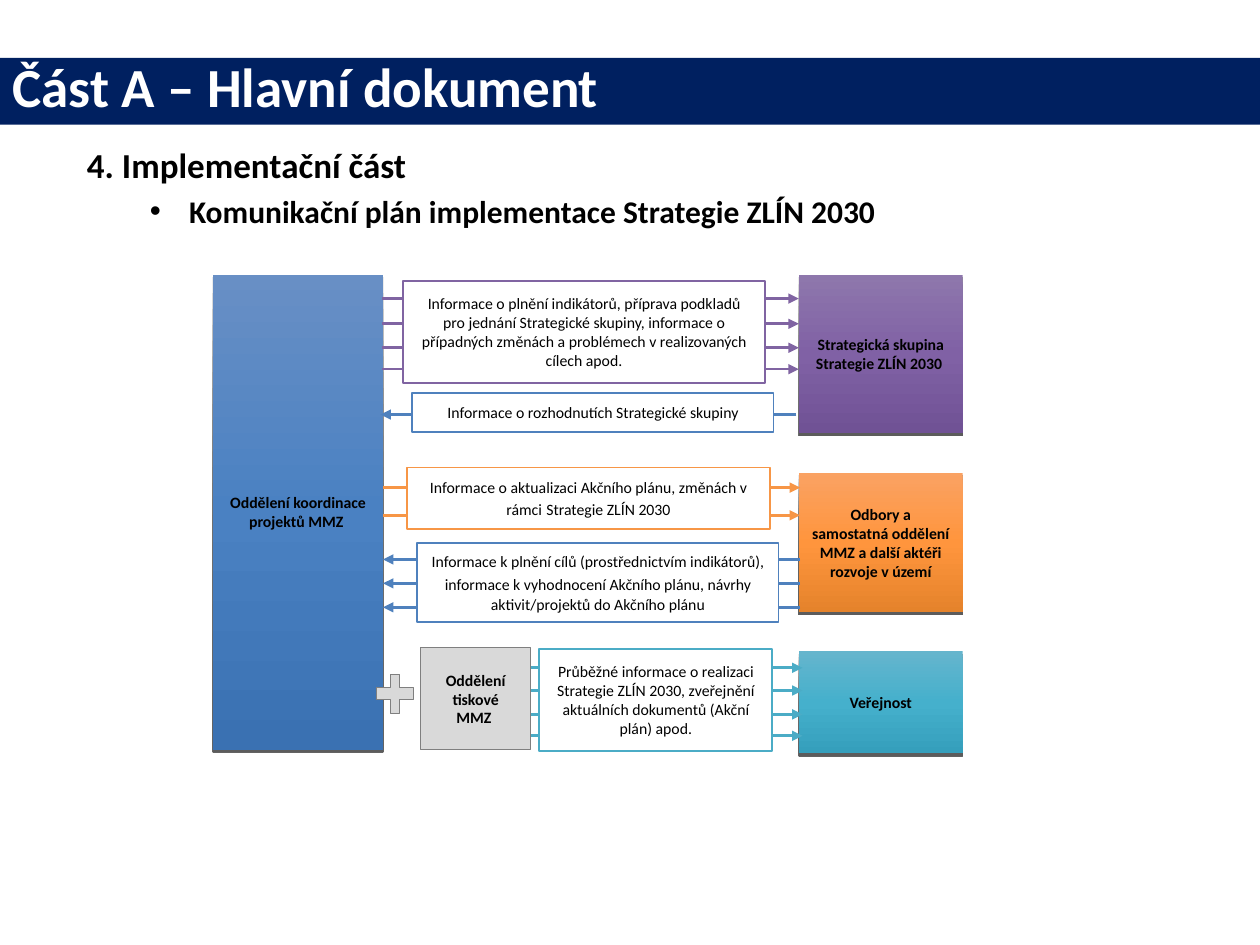
"""Build the slide on the communication plan of the Strategie ZLÍN 2030."""
from dataclasses import dataclass
from typing import Optional

from lxml.etree import SubElement
from pptx import Presentation
from pptx.dml.color import RGBColor
from pptx.enum.shapes import MSO_CONNECTOR, MSO_SHAPE
from pptx.enum.text import MSO_ANCHOR, MSO_AUTO_SIZE, PP_ALIGN
from pptx.oxml import parse_xml
from pptx.oxml.ns import nsdecls, qn
from pptx.util import Inches, Pt

FONT = "Calibri"
NAVY = RGBColor(0x00, 0x20, 0x60)
WHITE = RGBColor(0xFF, 0xFF, 0xFF)
BLACK = RGBColor(0x00, 0x00, 0x00)
GRAY = RGBColor(0xD9, 0xD9, 0xD9)
GRAY_EDGE = RGBColor(0x7F, 0x7F, 0x7F)
PURPLE = RGBColor(0x80, 0x64, 0xA2)
BLUE = RGBColor(0x4F, 0x81, 0xBD)
ORANGE = RGBColor(0xF7, 0x96, 0x46)
TEAL = RGBColor(0x4B, 0xAC, 0xC6)
BLUE_SHADES = (RGBColor(0x68, 0x8F, 0xC5), RGBColor(0x4A, 0x81, 0xC2), RGBColor(0x3A, 0x71, 0xB2))
PURPLE_SHADES = (RGBColor(0x8E, 0x77, 0xAC), RGBColor(0x80, 0x61, 0xA5), RGBColor(0x70, 0x52, 0x95))
ORANGE_SHADES = (RGBColor(0xFA, 0xA2, 0x63), RGBColor(0xFF, 0x95, 0x3D), RGBColor(0xE5, 0x83, 0x2B))
TEAL_SHADES = (RGBColor(0x65, 0xB5, 0xCD), RGBColor(0x45, 0xB0, 0xCC), RGBColor(0x35, 0x9F, 0xBC))


@dataclass
class Box:
    left: float
    top: float
    width: float
    height: float
    text: tuple = ()


@dataclass
class Party:
    box: Box
    shades: tuple


@dataclass
class Message:
    box: Box
    color: RGBColor
    start: float
    end: float
    levels: tuple


PARTIES = (
    Party(Box(1.69, 2.18, 1.35, 3.77, ("Oddělení koordinace projektů MMZ ",)), BLUE_SHADES),
    Party(Box(6.34, 2.18, 1.3, 1.26, ("Strategická skupina Strategie ZLÍN 2030 ",)), PURPLE_SHADES),
    Party(Box(6.34, 3.75, 1.3, 1.11, (
        "Odbory a samostatná oddělení MMZ a další aktéři rozvoje v území",)), ORANGE_SHADES),
    Party(Box(6.34, 5.17, 1.3, 0.81, ("Veřejnost",)), TEAL_SHADES),
)
MESSAGES = (
    Message(Box(3.2, 2.23, 2.87, 0.81, (
        "Informace o plnění indikátorů, příprava podkladů pro jednání Strategické skupiny, "
        "informace o případných změnách a problémech v realizovaných cílech apod.",)),
        PURPLE, 3.03, 6.34, (2.37, 2.57, 2.76, 2.93)),
    Message(Box(3.27, 3.12, 2.87, 0.31, ("Informace o rozhodnutích Strategické skupiny",)),
            BLUE, 6.32, 3.02, (3.29,)),
    Message(Box(3.23, 3.71, 2.88, 0.49, (
        "Informace o aktualizaci Akčního plánu, změnách v rámci", "Strategie ZLÍN 2030")),
        ORANGE, 3.04, 6.35, (3.87, 4.09)),
    Message(Box(3.31, 4.31, 2.87, 0.63, (
        "Informace k plnění cílů (prostřednictvím indikátorů), "
        "informace k vyhodnocení Akčního plánu, návrhy", "aktivit/projektů do Akčního plánu")),
        BLUE, 6.35, 3.04, (4.44, 4.63, 4.82)),
    Message(Box(4.28, 5.15, 1.85, 0.81, (
        "Průběžné informace o realizaci Strategie ZLÍN 2030, "
        "zveřejnění aktuálních dokumentů (Akční plán) apod.",)),
        TEAL, 3.46, 6.37, (5.3, 5.48, 5.67, 5.84)),
)
PRESS_OFFICE = Box(3.34, 5.14, 0.87, 0.81, ("Oddělení tiskové MMZ ",))
PLUS = Box(2.99, 5.35, 0.29, 0.31)


def place(shape, box: Box) -> None:
    shape.left, shape.top = Inches(box.left), Inches(box.top)
    shape.width, shape.height = Inches(box.width), Inches(box.height)


def set_font(font, size: float, color: RGBColor, bold: bool) -> None:
    font.name, font.size, font.bold = FONT, Pt(size), bold
    font.color.rgb = color


def write_label(shape, parts: tuple, bold: bool) -> None:
    frame = shape.text_frame
    frame.word_wrap = True
    frame.vertical_anchor = MSO_ANCHOR.MIDDLE
    paragraph = frame.paragraphs[0]
    paragraph.alignment = PP_ALIGN.CENTER
    paragraph.space_after = Pt(10)
    set_font(paragraph.font, 9, BLACK, bold)
    for index, part in enumerate(parts):
        if index:
            gap = paragraph.add_run()
            gap.text = " "
            gap.font.size = Pt(11)
        paragraph.add_run().text = part


def add_box(slide, box: Box, fill: Optional[RGBColor] = None, edge: Optional[RGBColor] = None,
            edge_width: float = 1, bold: bool = False, kind=MSO_SHAPE.RECTANGLE):
    shape = slide.shapes.add_shape(kind, 0, 0, 0, 0)
    place(shape, box)
    shape.shadow.inherit = False
    if fill is not None:
        shape.fill.solid()
        shape.fill.fore_color.rgb = fill
    if edge is None:
        shape.line.fill.background()
    else:
        shape.line.color.rgb = edge
        shape.line.width = Pt(edge_width)
    if box.text:
        write_label(shape, box.text, bold)
    return shape


def add_party(slide, party: Party) -> None:
    properties = add_box(slide, party.box, bold=True).element.spPr
    stops = "".join(
        f'<a:gs pos="{index * 50000}"><a:srgbClr val="{shade}"/></a:gs>'
        for index, shade in enumerate(party.shades))
    properties.find(qn("a:prstGeom")).addnext(parse_xml(
        f'<a:gradFill {nsdecls("a")} rotWithShape="1"><a:gsLst>{stops}</a:gsLst>'
        '<a:lin ang="5400000" scaled="0"/></a:gradFill>'))
    shadow = SubElement(properties.find(qn("a:effectLst")), qn("a:outerShdw"),
                        blurRad="0", dist=str(Pt(1.5)), dir="5400000", rotWithShape="0")
    color = SubElement(shadow, qn("a:srgbClr"), val=str(BLACK))
    SubElement(color, qn("a:alpha"), val="63000")


def add_arrow(slide, start: float, end: float, level: float, color: RGBColor) -> None:
    arrow = slide.shapes.add_connector(
        MSO_CONNECTOR.STRAIGHT, Inches(start), Inches(level), Inches(end), Inches(level))
    arrow.line.color.rgb = color
    arrow.line.width = Pt(1.5)
    SubElement(arrow.line._get_or_add_ln(), qn("a:tailEnd"), type="triangle")
    SubElement(arrow.element.spPr, qn("a:effectLst"))


def add_heading(slide) -> None:
    title = slide.shapes.title
    place(title, Box(0, 0.46, 10, 0.53))
    title.fill.solid()
    title.fill.fore_color.rgb = NAVY
    title.text_frame.text = "Část A – Hlavní dokument"
    title.text_frame.auto_size = MSO_AUTO_SIZE.NONE
    title.text_frame.vertical_anchor = MSO_ANCHOR.MIDDLE
    paragraph = title.text_frame.paragraphs[0]
    paragraph.alignment = PP_ALIGN.LEFT
    paragraph.line_spacing = 0.8
    set_font(paragraph.font, 31.5, WHITE, True)


def add_outline(slide) -> None:
    body = slide.placeholders[1]
    place(body, Box(0.59, 1.09, 9.21, 6.43))
    frame = body.text_frame
    frame.text = "4. Implementační část\nKomunikační plán implementace Strategie ZLÍN 2030"
    frame.auto_size = MSO_AUTO_SIZE.NONE
    styles = ((0.5, -0.5, 20, None), (0.81, -0.31, 18, "•"))
    for level, (paragraph, style) in enumerate(zip(frame.paragraphs, styles)):
        margin, indent, size, bullet = style
        paragraph.level = level
        properties = paragraph._p.get_or_add_pPr()
        properties.set("marL", str(Inches(margin)))
        properties.set("indent", str(Inches(indent)))
        if bullet:
            SubElement(properties, qn("a:buFont"), typeface="Arial")
            SubElement(properties, qn("a:buChar"), char=bullet)
        else:
            SubElement(properties, qn("a:buNone"))
        set_font(paragraph.font, size, BLACK, True)


def main() -> None:
    presentation = Presentation()
    presentation.slide_width, presentation.slide_height = Inches(10), Inches(7.5)
    slide = presentation.slides.add_slide(presentation.slide_layouts[1])
    add_heading(slide)
    add_outline(slide)
    for party in PARTIES:
        add_party(slide, party)
    for message in MESSAGES:
        for level in message.levels:
            add_arrow(slide, message.start, message.end, level, message.color)
        add_box(slide, message.box, WHITE, message.color)
    add_box(slide, PRESS_OFFICE, GRAY, GRAY_EDGE, 0.5, bold=True)
    plus = add_box(slide, PLUS, GRAY, GRAY_EDGE, 0.5, kind=MSO_SHAPE.CROSS)
    plus.adjustments[0] = 0.37
    presentation.save("out.pptx")


if __name__ == "__main__":
    main()
